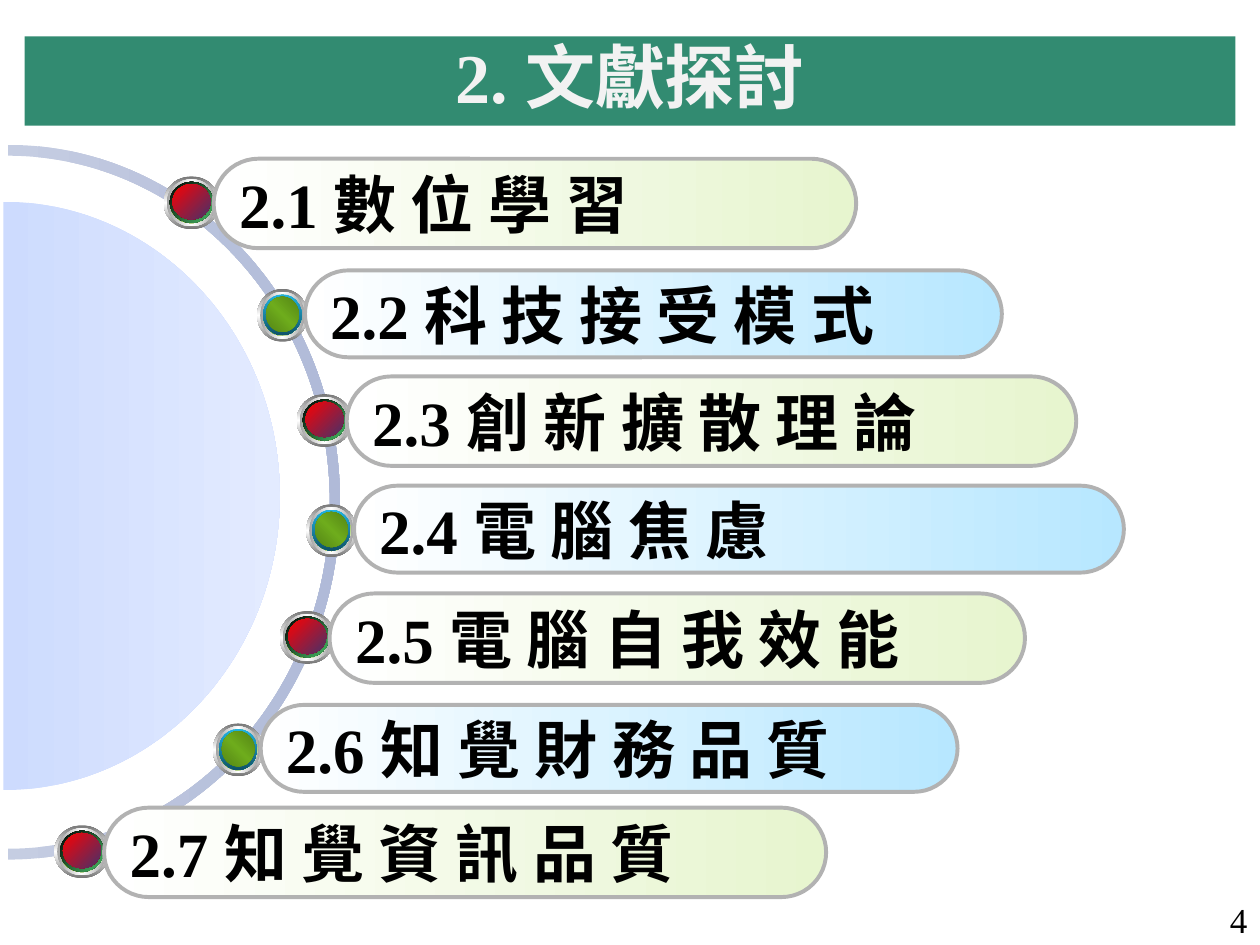
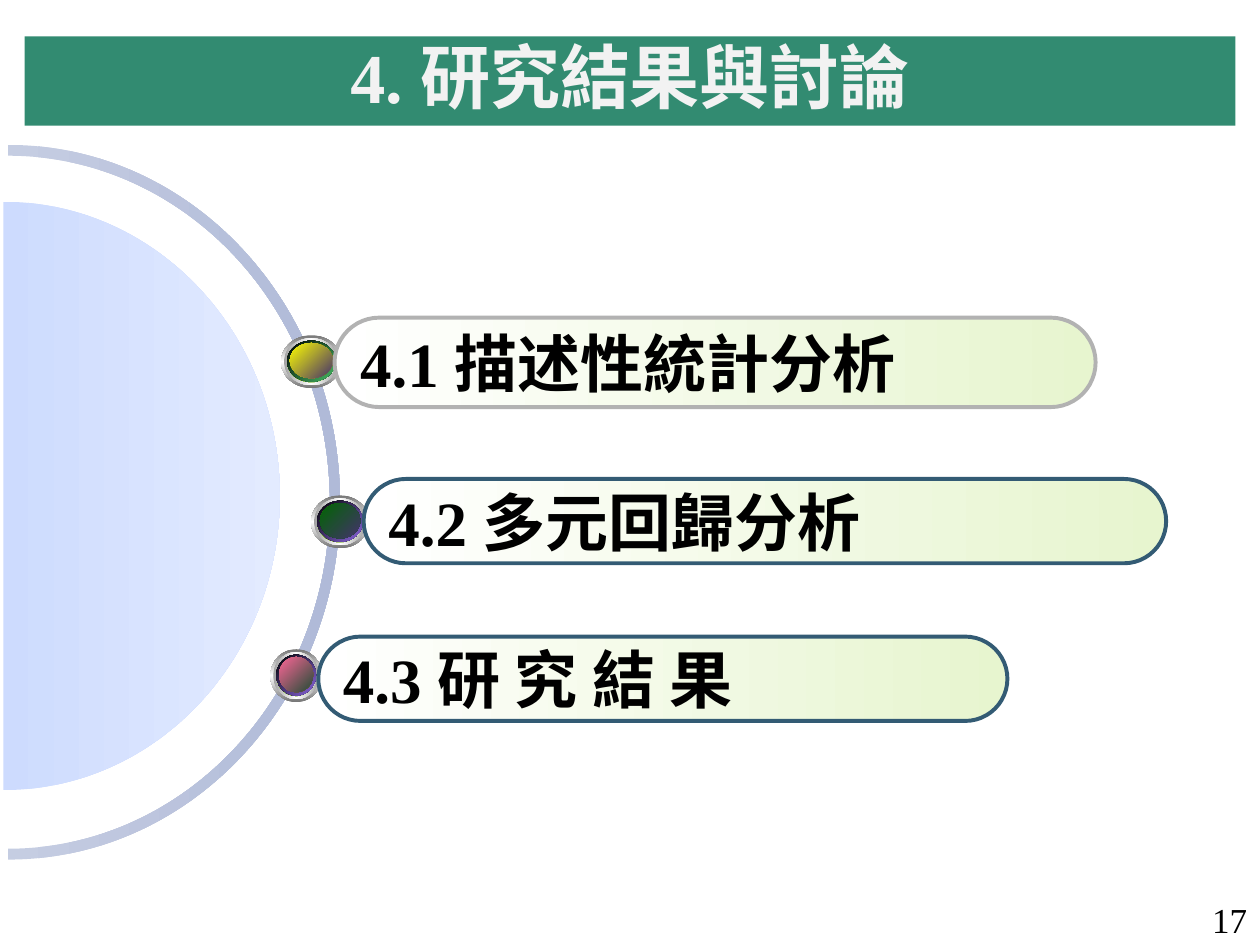
import math
from dataclasses import dataclass

import lxml.etree
import pptx
import pptx.dml.color
import pptx.enum.shapes
import pptx.enum.text
import pptx.oxml.ns
import pptx.util

Pt = pptx.util.Pt
qn = pptx.oxml.ns.qn
SHAPES = pptx.enum.shapes.MSO_SHAPE
ALIGN = pptx.enum.text.PP_ALIGN
MIDDLE = pptx.enum.text.MSO_ANCHOR.MIDDLE


@dataclass(frozen=True)
class Theme:
    latin: str = "Times New Roman"
    chinese: str = "Noto Sans CJK SC"
    band: str = "328B71"
    title_text: str = "F2F2F2"
    text: str = "000000"
    title_size: int = 40
    topic_size: int = 36
    number_size: int = 20
    outline: float = 2.25
    grey: str = "B2B2B2"
    navy: str = "335B74"
    lime: tuple = ((0, "FFFFFF"), (100, "E7F5CF"))
    sky: tuple = ((0, "FFFFFF"), (100, "B7E7FF"))
    ring: tuple = ((0, "C5CDE2"), (100, "B0BAD8"))
    disc: tuple = ((0, "CDDBFE"), (100, "E3EBFF"))
    bezel: tuple = ((0, "767676"), (50, "FFFFFF"), (100, "767676"))
    rim: tuple = ((0, "A2A2A2"), (50, "FFFFFF"), (100, "A2A2A2"))
    shine: tuple = ((0, "FFFFFF"), (50, "6EAC1C"), (100, "FFFFFF"))
    green_ball: tuple = ((0, "548415"), (50, "6EAC1C"), (100, "548415"))
    red_ball: tuple = ((0, "FF0000"), (16, "E00812"), (25, "D10C1B"), (42, "B1152E"),
                       (56, "971C3D"), (72, "7A244E"), (82, "672959"), (100, "45326D"))
    yellow_ball: tuple = ((0, "FFFF00"), (100, "45326D"))
    forest_ball: tuple = ((0, "006600"), (50, "224C36"), (100, "45326D"))
    pink_ball: tuple = ((0, "FF6699"), (100, "224C36"))
    green_glow: tuple = ((0, "000000"), (100, "48BE67"))
    blue_glow: tuple = ((0, "21B3E1"), (100, "0F5368"))
    violet_glow: tuple = ((0, "000000"), (100, "8D67E1"))


THEME = Theme()


@dataclass(frozen=True)
class TopicStyle:
    knob_width: float
    knob_reach: float
    knob_drop: float
    pill_height: float
    pill: tuple
    line: str
    glow: tuple
    glow_angle: int
    ball: tuple = ()


RED = TopicStyle(31.7, 28.5, 10.1, 51.1, THEME.lime, THEME.grey,
                 THEME.green_glow, 45, THEME.red_ball)
GREEN = TopicStyle(28.8, 27.3, 10.6, 49.7, THEME.sky, THEME.grey, THEME.blue_glow, 90)
YELLOW = TopicStyle(34.6, 30.6, 10.1, 51.1, THEME.lime, THEME.grey,
                    THEME.green_glow, 45, THEME.yellow_ball)
FOREST = TopicStyle(33.1, 30, 9.4, 48.2, THEME.lime, THEME.navy,
                    THEME.violet_glow, 45, THEME.forest_ball)
PINK = TopicStyle(29.5, 27.4, 7.2, 48.2, THEME.lime, THEME.navy,
                  THEME.violet_glow, 45, THEME.pink_ball)

KNOB_HEIGHT = 30.2

LITERATURE = [
    ("2.5", "電 腦 自 我 效 能", 188.3, 339.1, 397.4, RED),
    ("2.6", "知 覺 財 務 品 質", 149, 402.8, 398.2, GREEN),
    ("2.1", "數 位 學 習", 122.1, 90.7, 367.2, RED),
    ("2.7", "知 覺 資 訊 品 質", 59.5, 461.5, 412.6, RED),
    ("2.2", "科 技 接 受 模 式", 174.3, 154.5, 398.2, GREEN),
    ("2.4", "電 腦 焦 慮", 202.3, 277.5, 439.9, GREEN),
    ("2.3", "創 新 擴 散 理 論", 198.1, 215.1, 416.9, RED),
]
RESULTS = [
    ("4.1", "描述性統計分析", 191.2, 181.5, 434.9, YELLOW),
    ("4.3", "研 究 結 果", 181.9, 363.8, 393.8, PINK),
    ("4.2", "多元回歸分析", 207.8, 273.7, 458.6, FOREST),
]


def rgb(code):
    return pptx.dml.color.RGBColor.from_string(code)


def fill_gradient(shape, stops, angle):
    shape.shadow.inherit = False
    shape.fill.gradient()
    shape.fill.gradient_angle = (360 - angle) % 360
    stop_list = shape._element.spPr.find(qn("a:gradFill")).find(qn("a:gsLst"))
    for old_stop in list(stop_list):
        stop_list.remove(old_stop)
    for position, code in stops:
        stop = lxml.etree.SubElement(stop_list, qn("a:gs"), pos=str(position * 1000))
        lxml.etree.SubElement(stop, qn("a:srgbClr"), val=code)


def add_span(para, text, font, size, color, bold=True):
    span = para.add_run()
    span.text = text
    span.font.name = font
    span.font.size = Pt(size)
    span.font.bold = bold
    span.font.color.rgb = rgb(color)
    east_asian = lxml.etree.SubElement(span._r.get_or_add_rPr(), qn("a:ea"))
    east_asian.set("typeface", font)


def add_heading(para, number, wording, size, color):
    add_span(para, number + " ", THEME.latin, size, color)
    add_span(para, wording, THEME.chinese, size, color)


def set_title(page, number, wording):
    title = page.shapes.title
    title.left, title.top, title.width, title.height = Pt(14), Pt(20.8), Pt(692), Pt(51)
    title.fill.solid()
    title.fill.fore_color.rgb = rgb(THEME.band)
    frame = title.text_frame
    frame.auto_size = pptx.enum.text.MSO_AUTO_SIZE.NONE
    frame.vertical_anchor = MIDDLE
    para = frame.paragraphs[0]
    para.alignment = ALIGN.CENTER
    para.line_spacing = 0.9
    add_heading(para, number, wording, THEME.title_size, THEME.title_text)


def add_page_number(page, number):
    box = page.shapes.add_textbox(Pt(557.8), Pt(511.2), Pt(162), Pt(28.8))
    box.text_frame.word_wrap = True
    box.text_frame.vertical_anchor = MIDDLE
    para = box.text_frame.paragraphs[0]
    para.alignment = ALIGN.RIGHT
    add_span(para, number, THEME.latin, THEME.number_size, THEME.text, bold=False)


def half_ellipse(left, middle, radius_x, radius_y):
    bend = 4 * (math.sqrt(2) - 1) / 3
    ratios = [(0, -1), (bend, -1), (1, -bend), (1, 0), (1, bend), (bend, 1), (0, 1)]
    return [(Pt(left + radius_x * across), Pt(middle + radius_y * down))
            for across, down in ratios]


def bend_segments(shape):
    segments = list(shape._element.spPr.iter(qn("a:lnTo")))
    for half in range(0, len(segments), 7):
        for first in (half, half + 3):
            curve = lxml.etree.Element(qn("a:cubicBezTo"))
            segments[first].addprevious(curve)
            for segment in segments[first:first + 3]:
                curve.append(segment[0])
                segment.getparent().remove(segment)


def add_outline(shapes, points, stops):
    builder = shapes.build_freeform(*points[0])
    builder.add_line_segments(points[1:], close=True)
    shape = builder.convert_to_shape()
    bend_segments(shape)
    fill_gradient(shape, stops, 0)
    shape.line.fill.background()


def add_dial(page):
    dial = page.shapes.add_group_shape().shapes
    outer = half_ellipse(4.7, 287, 189.6, 204.2)
    inner = half_ellipse(4.7, 287, 183.8, 198)
    add_outline(dial, outer + inner[::-1], THEME.ring)
    add_outline(dial, half_ellipse(1.9, 283.4, 158, 168.1), THEME.disc)


def add_knob(shapes, left, top, style):
    layers = [(0, 0, THEME.bezel, 90), (1.7, 0, THEME.rim, 0), (3.4, 0, THEME.shine, 45),
              (3.4, -0.3, style.glow, style.glow_angle), (5, -0.6, THEME.green_ball, 315)]
    if style.ball:
        layers.append((5, -0.6, style.ball, 45))
    for inset, shift, stops, angle in layers:
        layer = shapes.add_shape(
            SHAPES.OVAL, Pt(left + inset), Pt(top + inset + shift),
            Pt(style.knob_width - 2 * inset), Pt(KNOB_HEIGHT - 2 * inset))
        fill_gradient(layer, stops, angle)
        layer.line.fill.background()


def add_topic(page, number, wording, left, top, width, style):
    topic = page.shapes.add_group_shape().shapes
    add_knob(topic, left - style.knob_reach, top + style.knob_drop, style)
    pill = topic.add_shape(SHAPES.ROUNDED_RECTANGLE, Pt(left), Pt(top),
                           Pt(width), Pt(style.pill_height))
    pill.adjustments[0] = 0.5
    fill_gradient(pill, style.pill, 0)
    pill.line.color.rgb = rgb(style.line)
    pill.line.width = Pt(THEME.outline)
    pill.text_frame.word_wrap = False
    pill.text_frame.vertical_anchor = MIDDLE
    para = pill.text_frame.paragraphs[0]
    para.alignment = ALIGN.LEFT
    add_heading(para, number, wording, THEME.topic_size, THEME.text)


def add_section(deck, number, wording, page_number, topics):
    page = deck.slides.add_slide(deck.slide_layouts.get_by_name("Title Only"))
    set_title(page, number, wording)
    add_page_number(page, page_number)
    add_dial(page)
    for topic in topics:
        add_topic(page, *topic)


def main():
    deck = pptx.Presentation()
    deck.slide_width, deck.slide_height = Pt(720), Pt(540)
    add_section(deck, "2.", "文獻探討", "4", LITERATURE)
    add_section(deck, "4.", "研究結果與討論", "17", RESULTS)
    deck.save("out.pptx")


if __name__ == "__main__":
    main()
